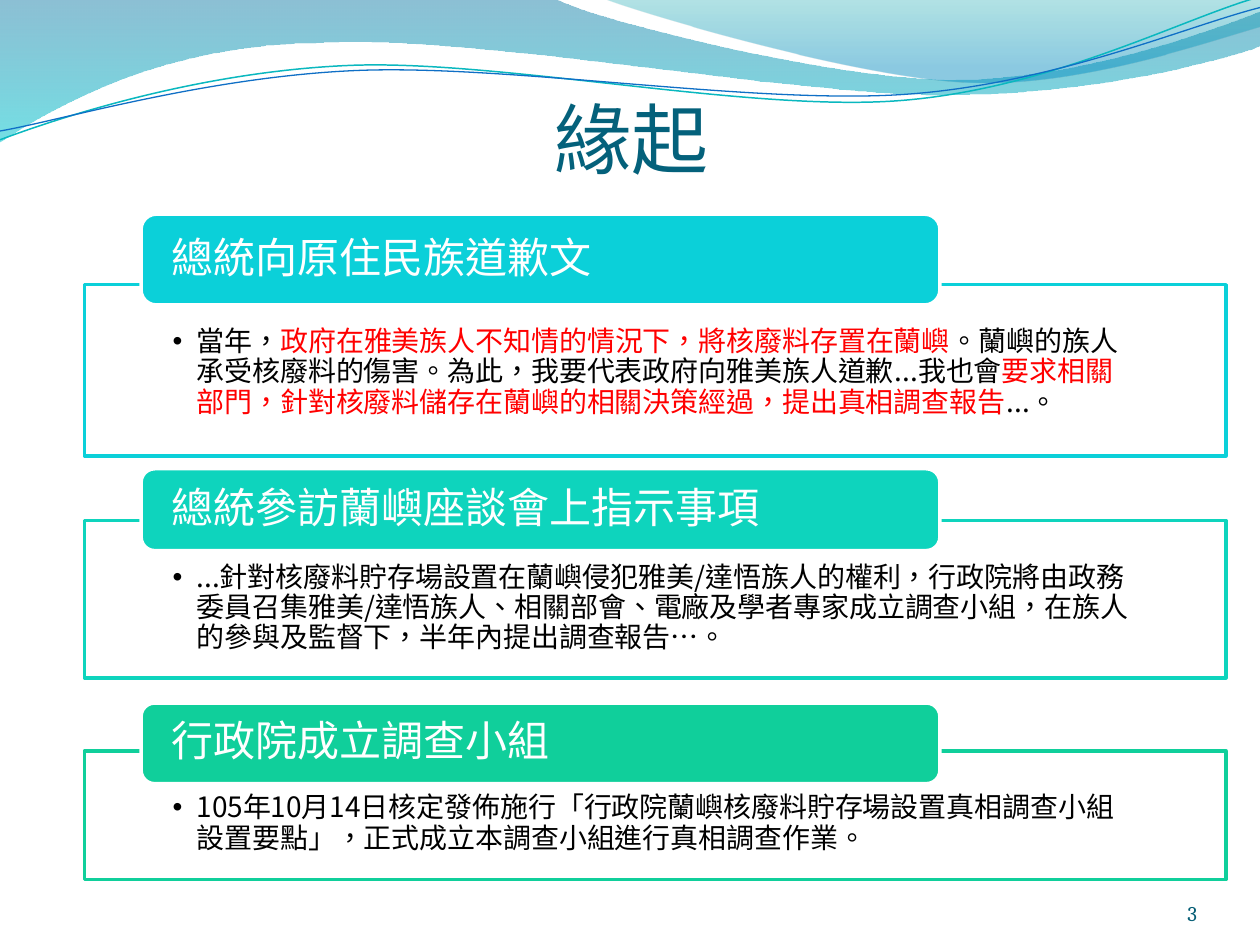
from lxml.etree import SubElement
from pptx import Presentation
from pptx.dml.color import RGBColor
from pptx.enum.shapes import MSO_SHAPE
from pptx.enum.text import MSO_ANCHOR, PP_ALIGN
from pptx.oxml.ns import qn
from pptx.util import Inches, Pt

WHITE = RGBColor(0xFF, 0xFF, 0xFF)
BLACK = RGBColor(0x00, 0x00, 0x00)
RED = RGBColor(0xFF, 0x00, 0x00)
TITLE_TEAL = RGBColor(0x04, 0x61, 0x7B)
NUMBER_TEAL = RGBColor(0x04, 0x5D, 0x75)
DEEP_BLUE = RGBColor(0x00, 0x74, 0xA1)
AQUA = RGBColor(0x00, 0xC6, 0xCF)
SEA_GREEN = RGBColor(0x00, 0xA1, 0xA9)
SKY_BLUE = RGBColor(0x00, 0x8B, 0xBF)
LINE_TEAL = RGBColor(0x0A, 0xB8, 0xBF)
LINE_BLUE = RGBColor(0x0F, 0x6F, 0xC6)
CYAN = RGBColor(0x0B, 0xD0, 0xD9)
TURQUOISE = RGBColor(0x0E, 0xD4, 0xBD)
GREEN = RGBColor(0x10, 0xCF, 0x9B)

CJK_FONT = "Noto Sans CJK SC"
UNITS = 100  # outline units per inch

# Each outline is a list of steps: two numbers draw a line, six a cubic curve
LEFT_WAVE = [
    (0, -0.01), (4.4, -0.01), (4.76, 0.17, 6.64, 0.63, 7.58, 0.63),
    (8.53, 0.63, 9.58, 0.26, 10, 0.09), (10.01, 0.36),
    (9.83, 0.44, 8.7, 0.76, 7.46, 0.75), (6.22, 0.75, 3.82, 0.28, 2.57, 0.34),
    (1.29, 0.35, 0.46, 0.83, -0.01, 1.13),
]
RIGHT_WAVE = [
    (4.79, -0.01), (5.09, 0.11, 6.82, 0.62, 7.69, 0.65),
    (8.56, 0.69, 9.61, 0.32, 10, 0.21), (10, 0),
]
TEAL_CURVE = [
    (0, 1.11), (0.48, 0.93, 1.58, 0.57, 2.77, 0.52),
    (3.95, 0.47, 5.93, 0.89, 7.13, 0.8), (8.33, 0.71, 9.38, 0.15, 9.98, -0.02),
]
BLUE_CURVE = [
    (0, 1.04), (0.47, 0.96, 1.64, 0.61, 2.83, 0.56),
    (4.03, 0.51, 5.97, 0.83, 7.17, 0.75), (8.36, 0.67, 9.41, 0.21, 10, 0.06),
]

# Heading, colour, heading top and height, frame top and height, body spans
SECTIONS = [
    ("總統向原住民族道歉文", CYAN, 1.72, 0.69, 2.26, 1.36, [
        ("當年，", BLACK),
        ("政府在雅美族人不知情的情況下，將核廢料存置在蘭嶼", RED),
        ("。蘭嶼的族人承受核廢料的傷害。為此，我要代表政府向雅美族人道歉...我也會", BLACK),
        ("要求相關部門，針對核廢料儲存在蘭嶼的相關決策經過，提出真相調查報告", RED),
        ("...。", BLACK),
    ]),
    ("總統參訪蘭嶼座談會上指示事項", TURQUOISE, 3.72, 0.65, 4.13, 1.25, [
        ("...針對核廢料貯存場設置在蘭嶼侵犯雅美/達悟族人的權利，行政院將由政務委員召集"
         "雅美/達悟族人、相關部會、電廠及學者專家成立調查小組，在族人的參與及監督下，"
         "半年內提出調查報告…。", BLACK),
    ]),
    ("行政院成立調查小組", GREEN, 5.58, 0.64, 5.96, 1.02, [
        ("105年10月14日核定發佈施行「行政院蘭嶼核廢料貯存場設置真相調查小組設置要點」，"
         "正式成立本調查小組進行真相調查作業。", BLACK),
    ]),
]
# The first heading shares the tab geometry of its own row
SECTIONS[0] = SECTIONS[0][:2] + (1.7, 0.72) + SECTIONS[0][4:]


def add_outline(page, steps, close):
    """Build the outline from its corner points, then bend it into curves."""
    corners = [tuple(round(v * UNITS) for v in step[-2:]) for step in steps]
    builder = page.shapes.build_freeform(*corners[0], scale=Inches(1) / UNITS)
    builder.add_line_segments(corners[1:], close=close)
    outline = builder.convert_to_shape()
    outline.shadow.inherit = False

    left, top = (min(axis) for axis in zip(*corners))
    segments = outline.element.iter(qn("a:lnTo"))
    for step, segment in zip(steps[1:], list(segments)):
        if len(step) == 2:
            continue
        segment.tag = qn("a:cubicBezTo")
        segment.clear()
        for x, y in zip(step[::2], step[1::2]):
            SubElement(segment, qn("a:pt"), x=str(round(x * UNITS) - left),
                       y=str(round(y * UNITS) - top))
    return outline


def add_wave(page, steps, stops):
    wave = add_outline(page, steps, True)
    wave.line.fill.background()
    wave.fill.gradient()
    wave.fill.gradient_angle = 270
    for stop, (position, color, opacity) in zip(wave.fill.gradient_stops, stops):
        stop.position = position
        stop.color.rgb = color
    # Opacity of each gradient stop
    for node, stop in zip(wave.element.iter(qn("a:srgbClr")), stops):
        SubElement(node, qn("a:alpha"), val=str(stop[2] * 1000))


def add_curve(page, steps, color, width):
    curve = add_outline(page, steps, False)
    curve.fill.background()
    curve.line.color.rgb = color
    curve.line.width = Pt(width)


def add_banner(page):
    add_wave(page, LEFT_WAVE, [(0, DEEP_BLUE, 45), (1, AQUA, 55)])
    add_wave(page, RIGHT_WAVE, [(0, SEA_GREEN, 30), (0.8, SKY_BLUE, 45)])
    add_curve(page, TEAL_CURVE, LINE_TEAL, 0.85)
    add_curve(page, BLUE_CURVE, LINE_BLUE, 0.75)


def set_frame(shape, anchor, left, top, right, bottom):
    frame = shape.text_frame
    frame.word_wrap = True
    frame.vertical_anchor = anchor
    frame.margin_left, frame.margin_top = Inches(left), Inches(top)
    frame.margin_right, frame.margin_bottom = Inches(right), Inches(bottom)
    return frame.paragraphs[0]


def write(para, spans, size, align, font=CJK_FONT):
    para.alignment = align
    para.font.size = Pt(size)
    para.font.name = font
    for text, color in spans:
        span = para.add_run()
        span.text = text
        span.font.color.rgb = color
        # Traditional Chinese punctuation and East Asian typeface
        properties = span.font._element
        properties.set("lang", "zh-TW")
        SubElement(properties, qn("a:ea"), typeface=font)


def add_title(page, left, top, width, height):
    title = page.shapes.title
    page.shapes._spTree.append(title.element)
    title.left, title.top = Inches(left), Inches(top)
    title.width, title.height = Inches(width), Inches(height)
    para = set_frame(title, MSO_ANCHOR.BOTTOM, 0, 0.05, 0, 0)
    write(para, [("緣起", TITLE_TEAL)], 44, PP_ALIGN.CENTER)


def add_panel(page, kind, left, top, width, height, fill, line):
    panel = page.shapes.add_shape(
        kind, Inches(left), Inches(top), Inches(width), Inches(height))
    panel.shadow.inherit = False
    panel.fill.solid()
    panel.fill.fore_color.rgb = fill
    panel.line.color.rgb = line
    panel.line.width = Pt(2)
    return panel


def add_section(page, heading, color, tab_top, tab_height, top, height, spans):
    # Framed body with one bullet
    body = add_panel(page, MSO_SHAPE.RECTANGLE, 0.67, top, 9.06, height, WHITE, color)
    para = set_frame(body, MSO_ANCHOR.TOP, 0.7, 0.34, 0.7, 0.12)
    para.line_spacing = 0.9
    properties = para._p.get_or_add_pPr()
    properties.set("marL", str(Inches(0.19)))
    properties.set("indent", str(Inches(-0.19)))
    SubElement(properties, qn("a:buFont"), typeface="Arial")
    SubElement(properties, qn("a:buChar"), char="•")
    write(para, spans, 16, PP_ALIGN.LEFT)

    # Heading tab over the top edge of the frame
    tab = add_panel(page, MSO_SHAPE.ROUNDED_RECTANGLE,
                    1.12, tab_top, 6.34, tab_height, color, WHITE)
    para = set_frame(tab, MSO_ANCHOR.MIDDLE, 0.21, 0, 0.21, 0)
    para.line_spacing = 0.9
    write(para, [(heading, WHITE)], 24, PP_ALIGN.LEFT)


def add_page_number(page, left, top, width, height):
    box = page.shapes.add_textbox(
        Inches(left), Inches(top), Inches(width), Inches(height))
    para = set_frame(box, MSO_ANCHOR.BOTTOM, 0, 0, 0, 0)
    write(para, [("3", NUMBER_TEAL)], 12, PP_ALIGN.RIGHT, "Cambria")


def main():
    deck = Presentation()
    deck.slide_width, deck.slide_height = Inches(10), Inches(7.5)
    page = deck.slides.add_slide(deck.slide_layouts[5])
    add_banner(page)
    add_title(page, 0.51, 0.44, 9, 1.02)
    for section in SECTIONS:
        add_section(page, *section)
    add_page_number(page, 8.67, 6.95, 0.83, 0.4)
    deck.save("out.pptx")


if __name__ == "__main__":
    main()
